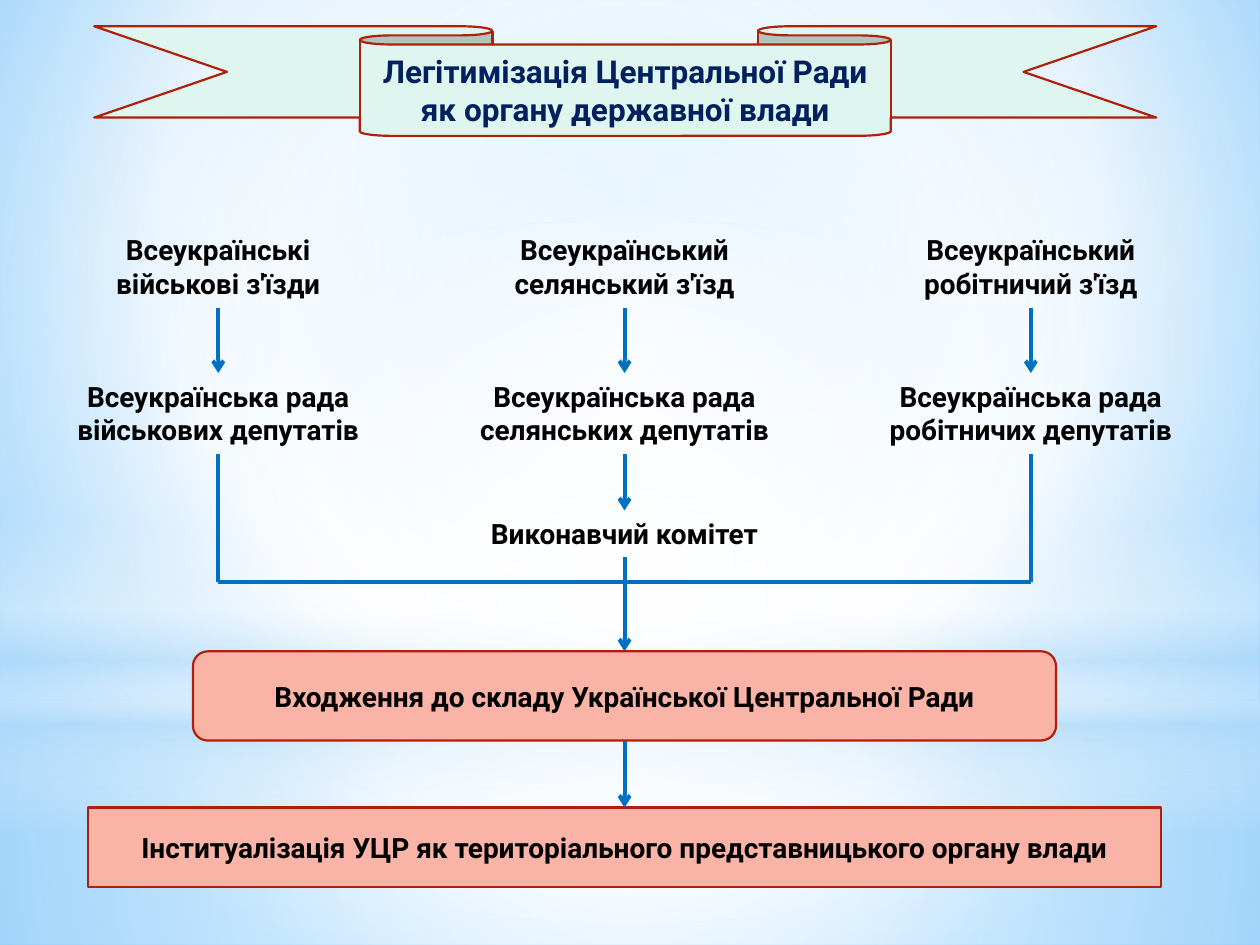
from dataclasses import dataclass

from lxml.etree import SubElement
from pptx import Presentation
from pptx.dml.color import RGBColor
from pptx.enum.shapes import MSO_CONNECTOR, MSO_SHAPE
from pptx.enum.text import MSO_ANCHOR, MSO_AUTO_SIZE, PP_ALIGN
from pptx.oxml.ns import qn
from pptx.util import Cm, Pt


@dataclass(frozen=True)
class Theme:
    """Colours, font and sizes of the slide."""
    font: str = "Roboto"
    title: float = 18
    body: float = 16
    navy: str = "002060"
    black: str = "000000"
    mint: str = "DFF5EF"
    salmon: str = "F9B3A7"
    border: str = "B01F07"
    arrow: str = "0070C0"
    white: str = "FFFFFF"
    sky: str = "B4DCFA"
    thin: float = 1.25
    thick: float = 2.25


T = Theme()
CENTRE = (50, 50, 50, 50)


def assign(obj, values):
    """Set each attribute of obj from a dict."""
    for name, value in values.items():
        setattr(obj, name, value)


def write(sp, lines, size=T.body, color=T.black, **frame):
    """Fill a shape with bold centred paragraphs."""
    tf = sp.text_frame
    assign(tf, frame)
    for i, line in enumerate(lines):
        p = tf.add_paragraph() if i else tf.paragraphs[0]
        p.alignment = PP_ALIGN.CENTER
        r = p.add_run()
        r.text = line
        assign(r.font, {"name": T.font, "size": Pt(size), "bold": True})
        r.font.color.rgb = RGBColor.from_string(color)


def gradient(no_fill, stops, focus=None):
    """Replace an empty fill with a circular or vertical gradient."""
    parent = no_fill.getparent()
    grad = SubElement(parent, qn("a:gradFill"), rotWithShape="1")
    parent.replace(no_fill, grad)
    stop_list = SubElement(grad, qn("a:gsLst"))
    for pos, color, alpha in stops:
        gs = SubElement(stop_list, qn("a:gs"), pos=str(pos * 1000))
        clr = SubElement(gs, qn("a:srgbClr"), val=color)
        if alpha < 100:
            SubElement(clr, qn("a:alpha"), val=str(alpha * 1000))
    if focus:
        route = SubElement(grad, qn("a:path"), path="circle")
        sides = {k: str(v * 1000) for k, v in zip("ltrb", focus)}
        SubElement(route, qn("a:fillToRect"), **sides)
    else:
        SubElement(grad, qn("a:lin"), ang="5400000", scaled="0")


def shape(s, kind, box):
    """Add a preset shape without a shadow."""
    sp = s.shapes.add_shape(kind, *map(Cm, box))
    sp.shadow.inherit = False
    return sp


def panel(s, kind, box, fill, text, **style):
    """Add a filled and outlined shape with a caption."""
    sp = shape(s, kind, box)
    sp.fill.solid()
    sp.fill.fore_color.rgb = RGBColor.from_string(fill)
    sp.line.color.rgb = RGBColor.from_string(T.border)
    sp.line.width = Pt(T.thin)
    write(sp, [text], vertical_anchor=MSO_ANCHOR.MIDDLE, word_wrap=True, **style)


def label(s, cx, y, w, h, lines):
    """Add unwrapped text centred on cx."""
    sp = s.shapes.add_textbox(Cm(cx - w / 2), Cm(y), Cm(w), Cm(h))
    write(sp, lines, word_wrap=False, auto_size=MSO_AUTO_SIZE.SHAPE_TO_FIT_TEXT)


def link(s, x1, y1, x2, y2, head=True):
    """Add a straight line, with an arrowhead if wanted."""
    c = s.shapes.add_connector(MSO_CONNECTOR.STRAIGHT, *map(Cm, (x1, y1, x2, y2)))
    c.line.color.rgb = RGBColor.from_string(T.arrow)
    c.line.width = Pt(T.thick)
    if head:
        SubElement(c.line._get_or_add_ln(), qn("a:tailEnd"), type="arrow")
    SubElement(c.element.spPr, qn("a:effectLst"))


def backdrop(s, box):
    """Paint the sky background and its translucent layers."""
    x, y, w, h = box
    s.background.fill.background()
    gradient(s.element.xpath(".//p:bgPr/a:noFill")[0],
             [(0, "9ED5FF", 100), (60, T.white, 100), (100, "5BB9FF", 100)],
             (20, 10, 20, 60))
    split = 14.17
    layers = [
        (MSO_SHAPE.RECTANGLE, split, h - split, CENTRE,
         [(0, T.white, 91), (37, T.white, 76), (100, T.sky, 79)]),
        (MSO_SHAPE.RECTANGLE, 0, split, CENTRE,
         [(0, T.white, 89), (48, T.white, 62), (100, T.sky, 79)]),
        (MSO_SHAPE.RECTANGLE, 10.46, 6.35, None,
         [(0, T.white, 0), (29, T.white, 30), (45, T.sky, 40),
          (55, T.white, 26), (65, T.sky, 60), (100, T.white, 0)]),
        (MSO_SHAPE.OVAL, 4.45, split, CENTRE,
         [(0, T.white, 100), (56, T.white, 0)]),
    ]
    for kind, top, height, focus, stops in layers:
        sp = shape(s, kind, (x, y + top, w, height))
        sp.line.fill.background()
        sp.fill.background()
        gradient(sp.element.xpath("./p:spPr/a:noFill")[0], stops, focus)


def banner(s, box):
    """Place the title ribbon."""
    panel(s, MSO_SHAPE.DOWN_RIBBON, box, T.mint,
          "Легітимізація Центральної Ради як органу державної влади",
          size=T.title, color=T.navy)


def councils(s, box):
    """Place three columns from congress to council and join them below."""
    x, y, w, h = box
    row, council, committee, committee_h = 1.63, 2.95, 5.72, 0.94
    bus = y + 7.16
    columns = [
        (4.8, "Всеукраїнські", "військові з'їзди", 6.4, "військових депутатів"),
        (5.13, "Всеукраїнський", "селянський з'їзд", 6.55, "селянських депутатів"),
        (5.03, "Всеукраїнський", "робітничий з'їзд", 6.48, "робітничих депутатів"),
    ]
    centres = [x + i * w / 2 for i in range(3)]
    for cx, (w1, first, second, w2, deputies) in zip(centres, columns):
        label(s, cx, y, w1, row, [first, second])
        label(s, cx, y + council, w2, row, ["Всеукраїнська рада", deputies])
        link(s, cx, y + row, cx, y + council)
    left, mid, right = centres
    label(s, mid, y + committee, 6.07, committee_h, ["Виконавчий комітет"])
    link(s, mid, y + council + row, mid, y + committee)
    for cx, top in ((left, council + row), (right, council + row),
                    (mid, committee + committee_h)):
        link(s, cx, y + top, cx, bus, head=False)
    link(s, left, bus, right, bus, head=False)
    link(s, mid, bus, mid, y + h)


def outcomes(s, box):
    """Place the two result boxes and the arrow between them."""
    x, y, w, h = box
    mid, upper_w, upper_h, lower_h = x + w / 2, 17.4, 1.8, 1.6
    panel(s, MSO_SHAPE.ROUNDED_RECTANGLE, (mid - upper_w / 2, y, upper_w, upper_h),
          T.salmon, "Входження до складу Української Центральної Ради")
    panel(s, MSO_SHAPE.RECTANGLE, (x, y + h - lower_h, w, lower_h), T.salmon,
          "Інституалізація УЦР як територіального представницького органу влади")
    link(s, mid, y + upper_h, mid, y + h - lower_h)


def main():
    """Build and save the slide."""
    prs = Presentation()
    assign(prs, {"slide_width": Cm(25.4), "slide_height": Cm(19.05)})
    s = prs.slides.add_slide(prs.slide_layouts[6])
    backdrop(s, (0, 0, 25.4, 19.05))
    banner(s, (1.9, 0.53, 21.41, 2.21))
    councils(s, (4.4, 4.57, 16.38, 8.56))
    outcomes(s, (1.78, 13.13, 21.62, 4.75))
    prs.save("out.pptx")


if __name__ == "__main__":
    main()
